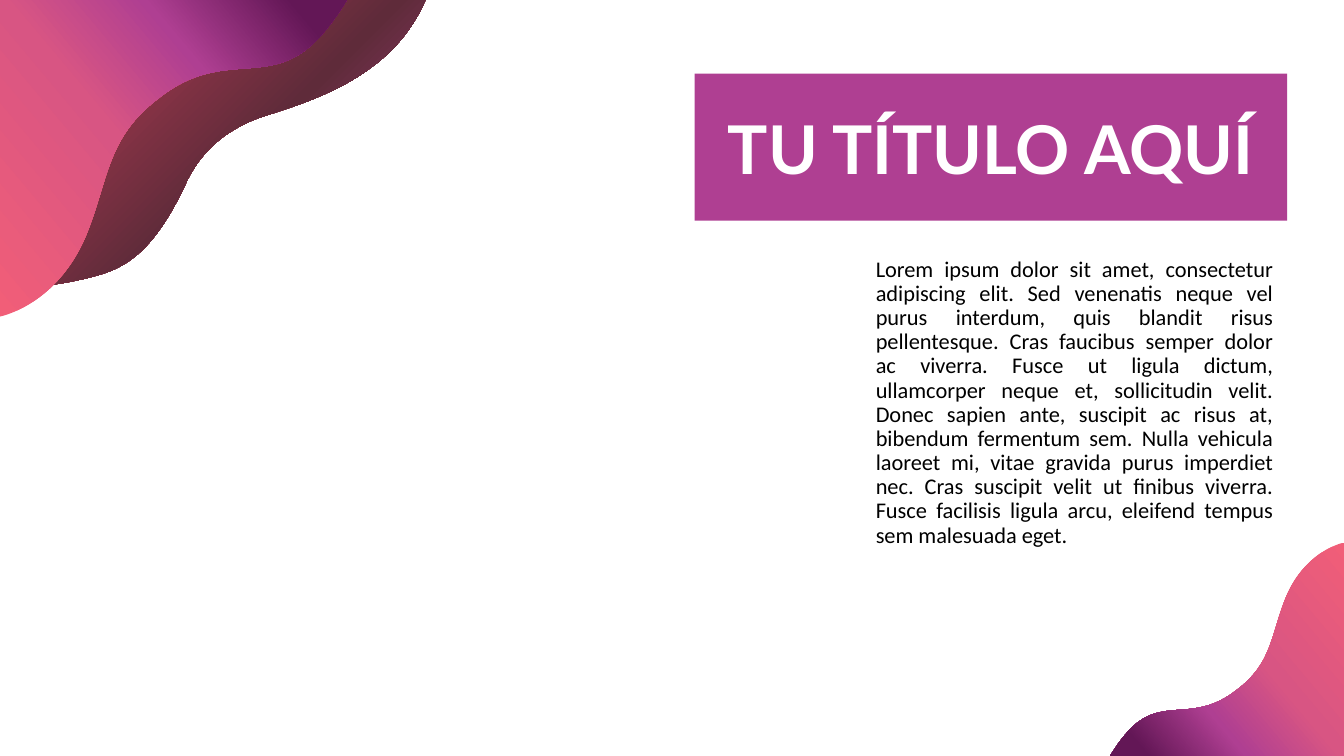
"""Build a title and text slide framed by two gradient waves."""
from lxml import etree
from pptx import Presentation
from pptx.dml.color import RGBColor
from pptx.enum.text import MSO_ANCHOR, MSO_AUTO_SIZE, PP_ALIGN
from pptx.oxml.ns import nsdecls, qn
from pptx.util import Inches, Pt

WIDTH, HEIGHT = 40 / 3, 7.5
COLORS = {
    "orchid": "AF3F92", "pink": "F15E78", "rose": "D85583", "plum": "631756",
    "magenta": "B24592", "wine": "5F2B3A", "brick": "A2384D", "coral": "F15F79",
    "white": "FFFFFF", "black": "000000",
}
TITLE = "TU TÍTULO AQUÍ"
BODY = (
    "Lorem ipsum dolor sit amet, consectetur adipiscing elit. Sed venenatis neque vel "
    "purus interdum, quis blandit risus pellentesque. Cras faucibus semper dolor ac viverra. "
    "Fusce ut ligula dictum, ullamcorper neque et, sollicitudin velit. Donec sapien ante, "
    "suscipit ac risus at, bibendum fermentum sem. Nulla vehicula laoreet mi, vitae gravida "
    "purus imperdiet nec. Cras suscipit velit ut finibus viverra. Fusce facilisis ligula arcu, "
    "eleifend tempus sem malesuada eget."
)
TITLE_BOX = (6.89, 0.73, 5.88, 1.46)
BODY_BOX = (8.59, 2.51, 4.14, 3.25)

SHADE = [
    (0.01, 2.85),
    (0.01, 2.85), (0.43, 2.88), (0.94, 2.74),
    (1.25, 2.66), (1.53, 2.49), (1.84, 1.83),
    (2.01, 1.45), (2.32, 1.25), (2.63, 1.15),
    (3.24, 0.96), (3.93, 0.7), (4.23, -0.02),
    (0, -0.02), (0, -0.02), (0, -0.02),
]
WAVE_WIDTH, WAVE_HEIGHT = 3.44, 3.14
WAVE = [
    (0, 3.14),
    (0, 3.14), (0.57, 3.03), (0.86, 2.32),
    (1.08, 1.77), (1.06, 1.36), (1.58, 0.97),
    (2.23, 0.46), (2.67, 0.9), (3.16, 0.38),
    (3.34, 0.18), (3.44, 0), (3.44, 0),
    (0, 0), (0, 0), (0, 0),
]
SMALL_SCALE = 2.32 / WAVE_WIDTH
SHADE_STOPS = [(0, "magenta"), (44, "wine"), (80, "brick"), (94, "coral")]
WAVE_STOPS = [(0, "pink"), (44, "rose"), (67, "orchid"), (91, "plum")]
SHADE_DIRECTION = '<a:path path="circle"><a:fillToRect l="100000" t="100000"/></a:path>'
WAVE_DIRECTION = f'<a:lin ang="{140 * 60000}" scaled="0"/>'


def flip(points, right, bottom, scale=1):
    """Turn scaled points half round, so their origin lands at right and bottom."""
    return [(right - scale * x, bottom - scale * y) for x, y in points]


def add_wave(slide, points, stops, direction, rotation=0):
    """Draw a closed outline of cubic curves with a gradient fill."""
    outline = [(Inches(x), Inches(y)) for x, y in points]
    builder = slide.shapes.build_freeform(*outline[0])
    builder.add_line_segments(outline[1:] + outline[:1], close=True)
    shape = builder.convert_to_shape()
    properties = shape.element.spPr
    segments = list(properties.iter(qn("a:lnTo")))[:len(points) - 1]
    for first in range(0, len(segments), 3):
        curve = etree.Element(qn("a:cubicBezTo"))
        segments[first].addprevious(curve)
        for segment in segments[first:first + 3]:
            curve.append(segment[0])
            segment.getparent().remove(segment)
    shape.rotation = rotation
    shape.shadow.inherit = False
    shape.line.fill.background()
    shape.fill.gradient()
    stop_list = "".join(
        f'<a:gs pos="{position * 1000}"><a:srgbClr val="{COLORS[color]}"/></a:gs>'
        for position, color in stops)
    gradient = etree.fromstring(
        f'<a:gradFill {nsdecls("a")} rotWithShape="1"><a:gsLst>{stop_list}</a:gsLst>'
        f'{direction}</a:gradFill>')
    properties.replace(properties.find(qn("a:gradFill")), gradient)


def write(shape, text, box, *, size, font, color, align, anchor, bold=False,
          spacing=1.0, before=0):
    """Place a shape and set its text and format."""
    shape.left, shape.top, shape.width, shape.height = map(Inches, box)
    frame = shape.text_frame
    frame.word_wrap = True
    frame.auto_size = MSO_AUTO_SIZE.NONE
    frame.vertical_anchor = anchor
    paragraph = frame.paragraphs[0]
    paragraph.alignment = align
    paragraph.line_spacing = spacing
    paragraph.space_before = Pt(before)
    run = paragraph.add_run()
    run.text = text
    run.font.size, run.font.name, run.font.bold = Pt(size), font, bold
    run.font.color.rgb = RGBColor.from_string(COLORS[color])


def main():
    """Assemble and save the slide."""
    presentation = Presentation()
    presentation.slide_width, presentation.slide_height = Inches(WIDTH), Inches(HEIGHT)
    slide = presentation.slides.add_slide(presentation.slide_layouts[5])

    add_wave(slide, SHADE, SHADE_STOPS, SHADE_DIRECTION)
    add_wave(slide, flip(WAVE, WAVE_WIDTH, WAVE_HEIGHT), WAVE_STOPS, WAVE_DIRECTION, 180)
    add_wave(slide, flip(WAVE, WIDTH, HEIGHT, SMALL_SCALE), WAVE_STOPS, WAVE_DIRECTION)

    title = slide.shapes.title
    title.fill.solid()
    title.fill.fore_color.rgb = RGBColor.from_string(COLORS["orchid"])
    write(title, TITLE, TITLE_BOX, size=48, font="Lato", color="white", bold=True,
          align=PP_ALIGN.CENTER, anchor=MSO_ANCHOR.MIDDLE)
    body = slide.shapes.add_textbox(*map(Inches, BODY_BOX))
    write(body, BODY, BODY_BOX, size=16, font="Calibri", color="black", spacing=0.9,
          before=10, align=PP_ALIGN.JUSTIFY, anchor=MSO_ANCHOR.TOP)
    presentation.save("out.pptx")


if __name__ == "__main__":
    main()
